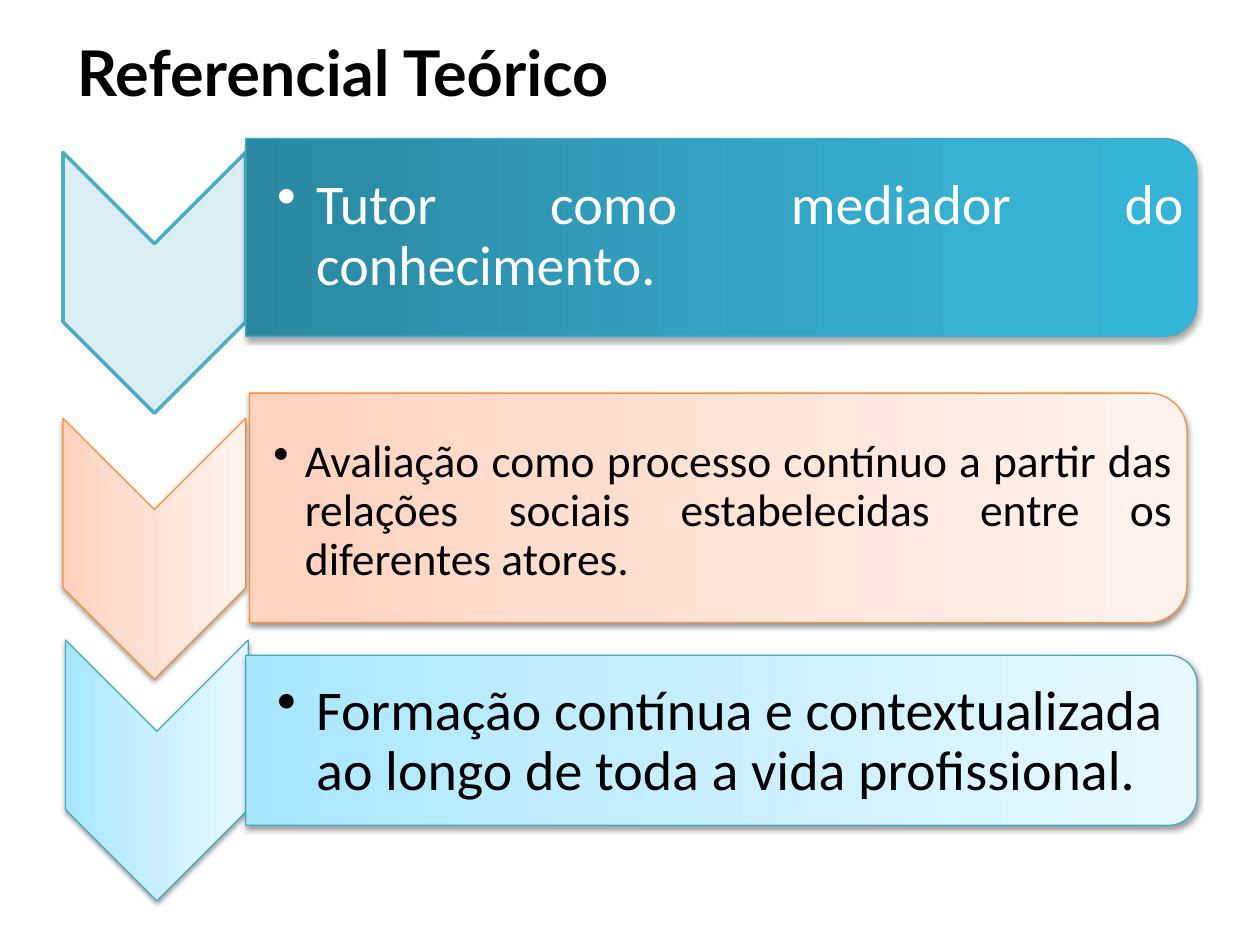
from dataclasses import dataclass

from lxml import etree
from pptx import Presentation
from pptx.dml.color import RGBColor
from pptx.enum.shapes import MSO_SHAPE
from pptx.enum.text import MSO_ANCHOR, PP_ALIGN
from pptx.oxml import parse_xml
from pptx.oxml.ns import nsdecls, qn
from pptx.util import Inches, Pt

CHEVRON = MSO_SHAPE.CHEVRON
ROUND = MSO_SHAPE.ROUND_2_SAME_RECTANGLE
MIDDLE = MSO_ANCHOR.MIDDLE
LEFT, JUSTIFY = PP_ALIGN.LEFT, PP_ALIGN.JUSTIFY

BLACK = RGBColor(0x00, 0x00, 0x00)
WHITE = RGBColor(0xFF, 0xFF, 0xFF)
PALE = RGBColor(0xDB, 0xEE, 0xF4)
AQUA = RGBColor(0x4B, 0xAC, 0xC6)
TEAL = RGBColor(0x46, 0xAA, 0xC5)
ORANGE = RGBColor(0xF6, 0x92, 0x40)

Stops = tuple[tuple[int, RGBColor], ...]
DEEP: Stops = (
    (0, RGBColor(0x2A, 0x88, 0xA2)),
    (80, RGBColor(0x37, 0xB1, 0xD2)),
    (100, RGBColor(0x34, 0xB4, 0xD6)),
)
PEACH: Stops = (
    (0, RGBColor(0xFF, 0xD2, 0xBD)),
    (35, RGBColor(0xFF, 0xDE, 0xD0)),
    (100, RGBColor(0xFF, 0xF2, 0xED)),
)
SKY: Stops = (
    (0, RGBColor(0xA7, 0xE6, 0xFF)),
    (35, RGBColor(0xC1, 0xED, 0xFF)),
    (100, RGBColor(0xE7, 0xF8, 0xFF)),
)


@dataclass
class Box:
    left: float
    top: float
    width: float
    height: float


@dataclass
class Look:
    fill: RGBColor | Stops
    line: RGBColor
    weight: float = 0.75
    alpha: int = 38
    drop: float = 1.6


@dataclass
class Row:
    arrow: Box
    arrow_look: Look
    bar: Box
    bar_look: Look
    area: Box
    text: str
    size: int
    color: RGBColor
    align: PP_ALIGN
    inset: float
    indent: float


PEACH_LOOK = Look(PEACH, ORANGE)
SKY_LOOK = Look(SKY, TEAL)
ROWS = [
    Row(Box(0.5, 1.21, 1.45, 2.07), Look(PALE, AQUA, 2, 0),
        Box(1.95, 1.1, 7.55, 1.57), Look(DEEP, TEAL, 0.75, 35, 1.8),
        Box(1.95, 1.17, 7.47, 1.42),
        "Tutor como mediador do conhecimento.",
        32, WHITE, JUSTIFY, 0.25, 0.31),
    Row(Box(0.5, 3.32, 1.45, 2.07), PEACH_LOOK,
        Box(1.98, 3.12, 7.44, 1.82), PEACH_LOOK,
        Box(1.98, 3.24, 7.35, 1.64),
        "Avaliação como processo contínuo a partir das relações sociais "
        "estabelecidas entre os diferentes atores.",
        26, BLACK, JUSTIFY, 0.19, 0.25),
    Row(Box(0.52, 5.08, 1.45, 2.07), SKY_LOOK,
        Box(1.95, 5.2, 7.55, 1.35), SKY_LOOK,
        Box(1.95, 5.28, 7.48, 1.22),
        "Formação contínua e contextualizada ao longo de toda a vida "
        "profissional.",
        32, BLACK, LEFT, 0.25, 0.31),
]


def shade(shape, stops: Stops) -> None:
    marks = "".join(
        f'<a:gs pos="{spot * 1000}"><a:srgbClr val="{color}"/></a:gs>'
        for spot, color in stops)
    shape.fill.background()
    blank = shape._element.spPr.find(qn("a:noFill"))
    blank.getparent().replace(blank, parse_xml(
        f'<a:gradFill {nsdecls("a")} rotWithShape="1"><a:gsLst>{marks}</a:gsLst>'
        '<a:lin ang="16200000" scaled="0"/></a:gradFill>'))


def cast(shape, look: Look) -> None:
    effects = shape._element.spPr.find(qn("a:effectLst"))
    effects.append(parse_xml(
        f'<a:outerShdw {nsdecls("a")} blurRad="{Pt(3.1)}" '
        f'dist="{Pt(look.drop)}" dir="5400000" rotWithShape="0">'
        f'<a:srgbClr val="{BLACK}"><a:alpha val="{look.alpha * 1000}"/>'
        '</a:srgbClr></a:outerShdw>'))


def draw_turned(slide, kind: MSO_SHAPE, box: Box, look: Look) -> None:
    shift = (box.width - box.height) / 2
    shape = slide.shapes.add_shape(
        kind, Inches(box.left + shift), Inches(box.top - shift),
        Inches(box.height), Inches(box.width))
    shape.rotation = 90
    shape.shadow.inherit = False
    if isinstance(look.fill, RGBColor):
        shape.fill.solid()
        shape.fill.fore_color.rgb = look.fill
    else:
        shade(shape, look.fill)
    shape.line.color.rgb = look.line
    shape.line.width = Pt(look.weight)
    if look.alpha:
        cast(shape, look)


def draw_text(slide, row: Row) -> None:
    area = row.area
    frame = slide.shapes.add_textbox(
        Inches(area.left), Inches(area.top),
        Inches(area.width), Inches(area.height)).text_frame
    frame.word_wrap = True
    frame.vertical_anchor = MIDDLE
    frame.margin_left = Inches(row.inset)
    frame.margin_top = frame.margin_right = frame.margin_bottom = Inches(0.02)
    para = frame.paragraphs[0]
    para.text = row.text
    para.alignment = row.align
    para.line_spacing = 0.9
    para.font.name = "Calibri"
    para.font.size = Pt(row.size)
    para.font.color.rgb = row.color
    props = para._p.get_or_add_pPr()
    props.set("marL", str(Inches(row.indent)))
    props.set("indent", str(-Inches(row.indent)))
    bullet = etree.Element(qn("a:buChar"), char="•")
    props.find(qn("a:defRPr")).addprevious(bullet)


def draw_title(slide) -> None:
    title = slide.shapes.title
    title.left, title.top = Inches(0.51), Inches(0.21)
    title.width, title.height = Inches(9), Inches(0.71)
    title.text_frame.vertical_anchor = MIDDLE
    para = title.text_frame.paragraphs[0]
    para.text = "Referencial Teórico"
    para.alignment = LEFT
    para.font.name = "Lato"
    para.font.size = Pt(36)
    para.font.bold = True
    para.font.color.rgb = BLACK


def main() -> None:
    deck = Presentation()
    deck.slide_width, deck.slide_height = Inches(10), Inches(7.5)
    slide = deck.slides.add_slide(deck.slide_layouts[5])
    draw_title(slide)
    for row in ROWS:
        draw_turned(slide, CHEVRON, row.arrow, row.arrow_look)
        draw_turned(slide, ROUND, row.bar, row.bar_look)
        draw_text(slide, row)
    deck.save("out.pptx")


if __name__ == "__main__":
    main()
